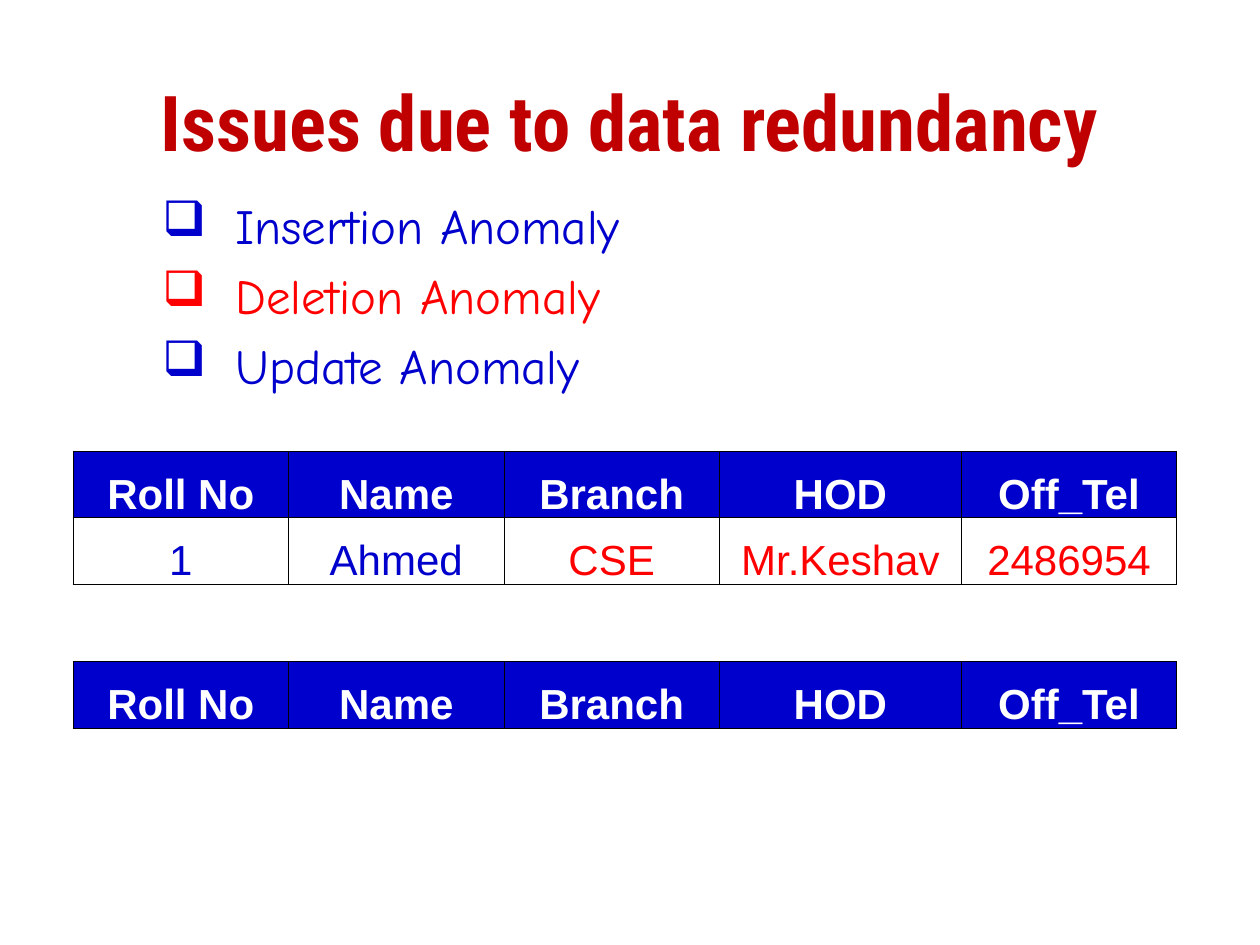
from lxml import etree
from pptx import Presentation
from pptx.dml.color import RGBColor
from pptx.enum.text import MSO_ANCHOR, PP_ALIGN
from pptx.oxml.ns import qn
from pptx.util import Inches, Pt

CENTER = PP_ALIGN.CENTER
MIDDLE, BOTTOM = MSO_ANCHOR.MIDDLE, MSO_ANCHOR.BOTTOM
COLORS = {"title": "C00000", "blue": "0000CC", "red": "FF0000",
          "white": "FFFFFF", "border": "000000"}


def style_font(paragraph, name, size, color, bold=False):
    font = paragraph.font
    font.name, font.size, font.bold = name, Pt(size), bold
    font.color.rgb = RGBColor.from_string(COLORS[color])


def add_borders(cell):
    properties = cell._tc.get_or_add_tcPr()
    for side in ("lnL", "lnR", "lnT", "lnB"):
        line = etree.SubElement(properties, qn(f"a:{side}"), w=str(Pt(0.5)))
        fill = etree.SubElement(line, qn("a:solidFill"))
        etree.SubElement(fill, qn("a:srgbClr"), val=COLORS["border"])


prs = Presentation()
prs.slide_width, prs.slide_height = Inches(10), Inches(7.5)
slide = prs.slides.add_slide(prs.slide_layouts[6])

# Title
title = slide.shapes.add_textbox(
    Inches(0.75), Inches(0.33), Inches(8.5), Inches(1.25)).text_frame
title.word_wrap = True
title.vertical_anchor = MIDDLE
heading = title.paragraphs[0]
heading.text = "Issues due to data redundancy"
heading.alignment = CENTER
style_font(heading, "Roboto Condensed", 44, "title", bold=True)

# Bulleted anomalies
anomalies = slide.shapes.add_textbox(
    Inches(0.75), Inches(1.5), Inches(8.5), Inches(4.5)).text_frame
anomalies.word_wrap = True
for i, (anomaly, color) in enumerate([("Insertion Anomaly", "blue"),
                                      ("Deletion Anomaly", "red"),
                                      ("Update Anomaly", "blue")]):
    item = anomalies.add_paragraph() if i else anomalies.paragraphs[0]
    item.text = anomaly
    item.space_before = Pt(6.5)
    properties = item._p.get_or_add_pPr()
    properties.set("marL", str(Inches(1.02)))
    properties.set("indent", str(Inches(-0.58)))
    etree.SubElement(properties, qn("a:buChar"), char="❑")
    style_font(item, "Comic Neue", 28, color)

# Student tables: one with a record, one left with only its header
header = ["Roll No", "Name", "Branch", "HOD", "Off_Tel"]
record = ["1", "Ahmed", "CSE", "Mr.Keshav", "2486954"]
record_colors = ["blue", "blue", "red", "red", "red"]
column_widths = [1.71, 1.71, 1.71, 1.92, 1.71]
row_height = 0.53

for top, rows in [(3.58, [header, record]), (5.25, [header])]:
    students = slide.shapes.add_table(
        len(rows), len(header), Inches(0.58), Inches(top),
        Inches(sum(column_widths)), Inches(row_height * len(rows))).table
    students.horz_banding = False
    for column, width in zip(students.columns, column_widths):
        column.width = Inches(width)
    for r, values in enumerate(rows):
        students.rows[r].height = Inches(row_height)
        is_header = r == 0
        for c, value in enumerate(values):
            cell = students.cell(r, c)
            cell.vertical_anchor = BOTTOM
            cell.margin_left = cell.margin_right = cell.margin_top = Inches(0.01)
            cell.margin_bottom = 0
            add_borders(cell)
            if is_header:
                cell.fill.solid()
                cell.fill.fore_color.rgb = RGBColor.from_string(COLORS["blue"])
            else:
                cell.fill.background()
            entry = cell.text_frame.paragraphs[0]
            entry.text = value
            entry.alignment = CENTER
            entry.space_before = Pt(5)
            style_font(entry, "Arial", 24,
                       "white" if is_header else record_colors[c], is_header)

prs.save("out.pptx")
